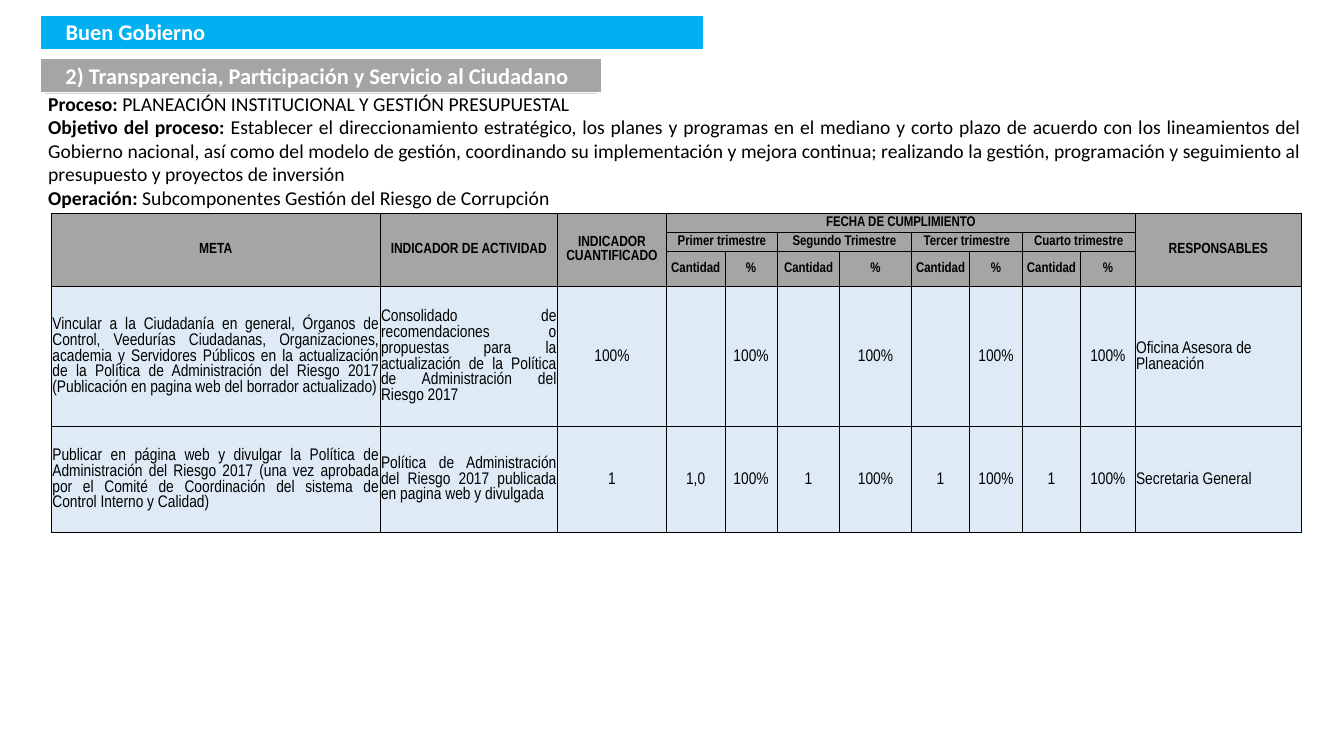
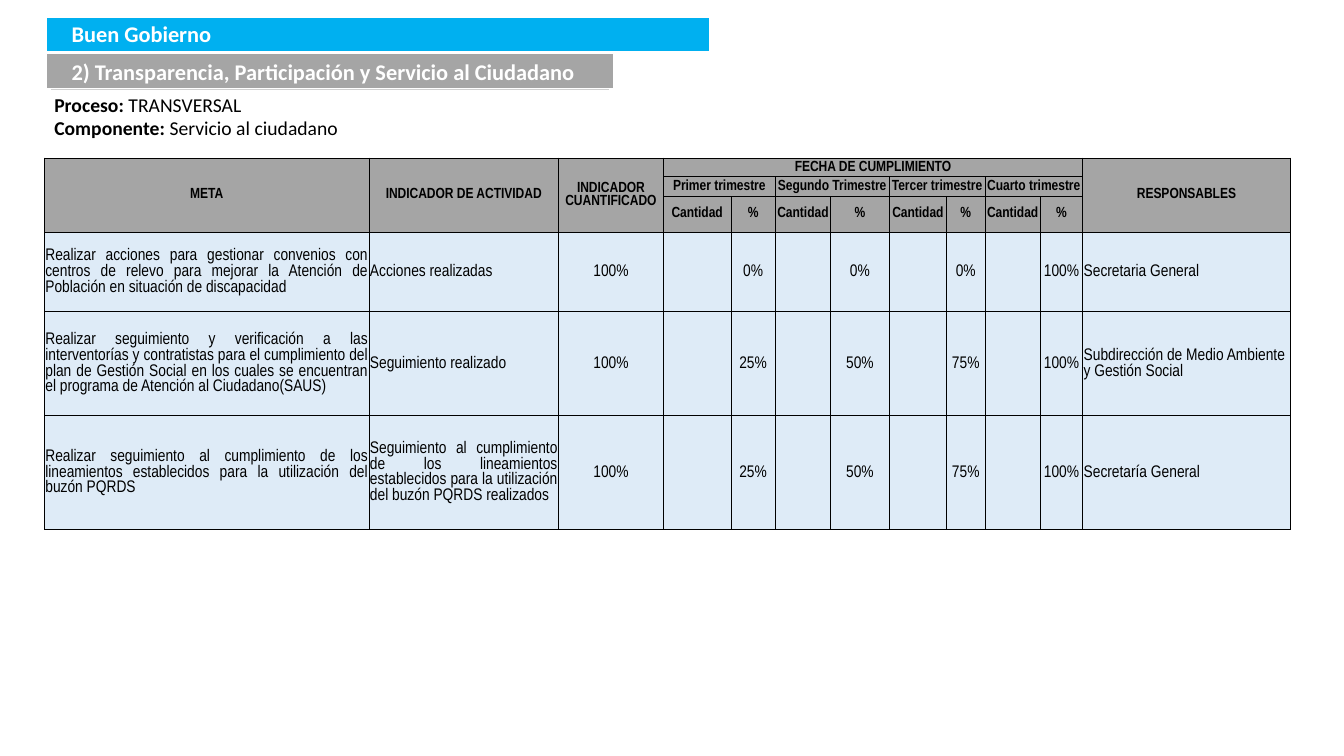
import itertools
from dataclasses import dataclass

import lxml.etree
import pptx
import pptx.dml.color
import pptx.enum.shapes
import pptx.enum.text
import pptx.oxml.ns
import pptx.util

PX = 9144  # EMU per px, 100 px to the inch
ALIGN = pptx.enum.text.PP_ALIGN
MIDDLE = pptx.enum.text.MSO_ANCHOR.MIDDLE


@dataclass(frozen=True)
class Theme:
    blue: str = "00B0F0"
    grey: str = "A5A5A5"
    pale_blue: str = "DEEBF7"
    rule: str = "D0D0D0"
    white: str = "FFFFFF"
    black: str = "000000"
    heading_font: str = "Calibri"
    table_font: str = "Arial Narrow"
    band_size: float = 16
    intro_size: float = 14
    header_size: float = 10.5
    data_size: float = 12
    band_border: float = 1.5
    cell_border: float = 0.5
    top_border: float = 1


def px(length):
    return pptx.util.Emu(length * PX)


def rgb(colour):
    return pptx.dml.color.RGBColor.from_string(colour)


class Deck:
    def __init__(self, theme):
        self.theme = theme
        self.presentation = pptx.Presentation()
        self.presentation.slide_width = px(1333)
        self.presentation.slide_height = px(750)
        self.slide = None

    def new_slide(self):
        title_only = self.presentation.slide_layouts[5]
        self.slide = self.presentation.slides.add_slide(title_only)

    def style(self, paragraph, font, size, colour, bold=None, align=ALIGN.LEFT):
        paragraph.alignment = align
        paragraph.font.name = font
        paragraph.font.size = pptx.util.Pt(size)
        paragraph.font.color.rgb = rgb(colour)
        paragraph.font.bold = bold

    def fill_band(self, band, text, colour):
        theme = self.theme
        band.fill.solid()
        band.fill.fore_color.rgb = rgb(colour)
        band.line.color.rgb = rgb(theme.white)
        band.line.width = pptx.util.Pt(theme.band_border)
        frame = band.text_frame
        frame.text = text
        frame.word_wrap = True
        frame.auto_size = pptx.enum.text.MSO_AUTO_SIZE.NONE
        frame.vertical_anchor = MIDDLE
        frame.margin_left = frame.margin_right = px(25)
        frame.margin_top = frame.margin_bottom = 0
        self.style(frame.paragraphs[0], theme.heading_font, theme.band_size,
                   theme.white, True)

    def title_band(self, text, left, top, width, height=35):
        title = self.slide.shapes.title
        title.left, title.top = px(left), px(top)
        title.width, title.height = px(width), px(height)
        self.fill_band(title, text, self.theme.blue)
        title.text_frame.paragraphs[0].line_spacing = 0.9

    def section_band(self, text, left, top, width, height=35):
        section = self.slide.shapes.add_shape(
            pptx.enum.shapes.MSO_SHAPE.RECTANGLE,
            px(left), px(top), px(width), px(height))
        section.shadow.inherit = False
        self.fill_band(section, text, self.theme.grey)
        self.rule(left + 5, left + width - 5, top + height + 1)

    def rule(self, start, end, top):
        rule = self.slide.shapes.add_connector(
            pptx.enum.shapes.MSO_CONNECTOR.STRAIGHT,
            px(start), px(top), px(end), px(top))
        rule.line.color.rgb = rgb(self.theme.rule)
        rule.line.width = pptx.util.Pt(0.5)
        lxml.etree.SubElement(rule._element.spPr,
                              pptx.oxml.ns.qn("a:effectLst"))

    def intro(self, entries, left, top, width, height, align=ALIGN.LEFT):
        theme = self.theme
        frame = self.slide.shapes.add_textbox(
            px(left), px(top), px(width), px(height)).text_frame
        frame.word_wrap = True
        for position, (label, text) in enumerate(entries):
            paragraph = frame.add_paragraph() if position else frame.paragraphs[0]
            self.style(paragraph, theme.heading_font, theme.intro_size,
                       theme.black, align=align)
            label_run = paragraph.add_run()
            label_run.text = f"{label}: "
            label_run.font.bold = True
            paragraph.add_run().text = text

    def border(self, cell, top_width):
        properties = cell._tc.get_or_add_tcPr()
        for side in "LRTB":
            width = top_width if side == "T" else self.theme.cell_border
            line = lxml.etree.SubElement(
                properties, pptx.oxml.ns.qn(f"a:ln{side}"),
                w=str(pptx.util.Pt(width)))
            solid = lxml.etree.SubElement(line, pptx.oxml.ns.qn("a:solidFill"))
            lxml.etree.SubElement(solid, pptx.oxml.ns.qn("a:srgbClr"),
                                  val=self.theme.black)

    def cell(self, cell, text, colour, size, bold, align, inset, top_width):
        self.border(cell, top_width)
        cell.fill.solid()
        cell.fill.fore_color.rgb = rgb(colour)
        cell.vertical_anchor = MIDDLE
        cell.margin_left = cell.margin_right = cell.margin_top = px(inset)
        cell.margin_bottom = 0
        cell.text = text
        self.style(cell.text_frame.paragraphs[0], self.theme.table_font, size,
                   self.theme.black, bold, align)

    def plan_table(self, left, top, columns, row_heights, goals, quarter_size):
        theme = self.theme
        rows = HEADER + goals
        table = self.slide.shapes.add_table(
            len(rows), len(columns), px(left), px(top),
            px(sum(columns)), px(sum(row_heights))).table
        table.horz_banding = False
        for column, width in zip(table.columns, columns):
            column.width = px(width)
        for row, height in zip(table.rows, row_heights):
            row.height = px(height)

        for r, texts in enumerate(rows):
            for c, text in enumerate(texts):
                top_width = theme.cell_border if r else theme.top_border
                if r < len(HEADER):
                    size = quarter_size if c in QUARTERS else theme.header_size
                    look = (theme.grey, size, True, ALIGN.CENTER, 0)
                else:
                    look = (theme.pale_blue, theme.data_size, False,
                            DATA_ALIGN[c], 1)
                self.cell(table.cell(r, c), text, *look, top_width)

        # Merged headings: full-height columns, the date band, each quarter
        for c in (0, 1, 2, 11):
            table.cell(0, c).merge(table.cell(2, c))
        table.cell(0, QUARTERS[0]).merge(table.cell(0, QUARTERS[-1]))
        for c in QUARTERS[::2]:
            table.cell(1, c).merge(table.cell(1, c + 1))


# Table structure shared by both slides
QUARTERS = range(3, 11)
QUARTER_NAMES = ("Primer trimestre", "Segundo Trimestre",
                 "Tercer trimestre", "Cuarto trimestre")
HEADER = [
    ["META", "INDICADOR DE ACTIVIDAD", "INDICADOR CUANTIFICADO",
     "FECHA DE CUMPLIMIENTO", *[""] * 7, "RESPONSABLES"],
    ["", "", "", *itertools.chain(*((name, "") for name in QUARTER_NAMES)), ""],
    ["", "", "", *["Cantidad", "%"] * 4, ""],
]
DATA_ALIGN = [ALIGN.JUSTIFY] * 2 + [ALIGN.CENTER] * 9 + [ALIGN.LEFT]


def goal(meta, indicator, target, percents, owner, amounts=("",) * 4):
    """One table row, with amount and percentage side by side per quarter."""
    progress = itertools.chain(*zip(amounts, percents))
    return [meta, indicator, target, *progress, owner]


TITLE = "Buen Gobierno"
SECTION = "2) Transparencia, Participación y Servicio al Ciudadano"

RISK_INTRO = [
    ("Proceso", "PLANEACIÓN INSTITUCIONAL Y GESTIÓN PRESUPUESTAL"),
    ("Objetivo del proceso",
     "Establecer el direccionamiento estratégico, los planes y programas en el "
     "mediano y corto plazo de acuerdo con los lineamientos del Gobierno "
     "nacional, así como del modelo de gestión, coordinando su implementación "
     "y mejora continua; realizando la gestión, programación y seguimiento al "
     "presupuesto y proyectos de inversión"),
    ("Operación", "Subcomponentes Gestión del Riesgo de Corrupción"),
]
RISK_GOALS = [
    goal("Vincular a la Ciudadanía en general, Órganos de Control, Veedurías "
         "Ciudadanas, Organizaciones, academia y Servidores Públicos en la "
         "actualización de la Política de Administración del Riesgo 2017 "
         "(Publicación en pagina web del borrador actualizado)",
         "Consolidado de recomendaciones o propuestas para la actualización "
         "de la Política de Administración del Riesgo 2017",
         "100%", ["100%"] * 4, "Oficina Asesora de Planeación"),
    goal("Publicar en página web y divulgar la Política de Administración del "
         "Riesgo 2017 (una vez aprobada por el Comité de Coordinación del "
         "sistema de Control Interno y Calidad)",
         "Política de Administración del Riesgo 2017 publicada en pagina web "
         "y divulgada",
         "1", ["100%"] * 4, "Secretaria General", ["1,0", "1", "1", "1"]),
]

SERVICE_INTRO = [("Proceso", "TRANSVERSAL"),
                 ("Componente", "Servicio al ciudadano")]
STEADY_PROGRESS = ["25%", "50%", "75%", "100%"]
SERVICE_GOALS = [
    goal("Realizar acciones para gestionar convenios con centros de relevo "
         "para mejorar la Atención de Población en situación de discapacidad",
         "Acciones realizadas",
         "100%", ["0%", "0%", "0%", "100%"], "Secretaria General"),
    goal("Realizar seguimiento y verificación a las interventorías y "
         "contratistas para el cumplimiento del plan de Gestión Social en los "
         "cuales se encuentran el programa de Atención al Ciudadano(SAUS)",
         "Seguimiento realizado",
         "100%", STEADY_PROGRESS,
         "Subdirección de Medio Ambiente y Gestión Social"),
    goal("Realizar seguimiento al cumplimiento de los lineamientos "
         "establecidos para la utilización del buzón PQRDS",
         "Seguimiento al cumplimiento de los lineamientos establecidos para "
         "la utilización del buzón PQRDS realizados",
         "100%", STEADY_PROGRESS, "Secretaría General"),
]


def main():
    deck = Deck(Theme())

    # Corruption risk management
    deck.new_slide()
    deck.title_band(TITLE, 40, 15, 658)
    deck.section_band(SECTION, 40, 57, 557)
    deck.intro(RISK_INTRO, 38, 86, 1263, 128, ALIGN.JUSTIFY)
    deck.plan_table(51, 212,
                    [326, 176, 108, 58, 52, 62, 71, 58, 52, 58, 54, 165],
                    [18, 19, 35, 139, 105], RISK_GOALS, quarter_size=10)

    # Service to citizens
    deck.new_slide()
    deck.title_band(TITLE, 46, 17, 658)
    deck.section_band(SECTION, 46, 53, 563)
    deck.intro(SERVICE_INTRO, 44, 87, 598, 57)
    deck.plan_table(44, 157,
                    [322, 188, 104, 67, 44, 55, 58, 57, 38, 55, 42, 206],
                    [18, 20, 35, 79, 103, 113], SERVICE_GOALS,
                    quarter_size=10.5)

    deck.presentation.save("out.pptx")


if __name__ == "__main__":
    main()
